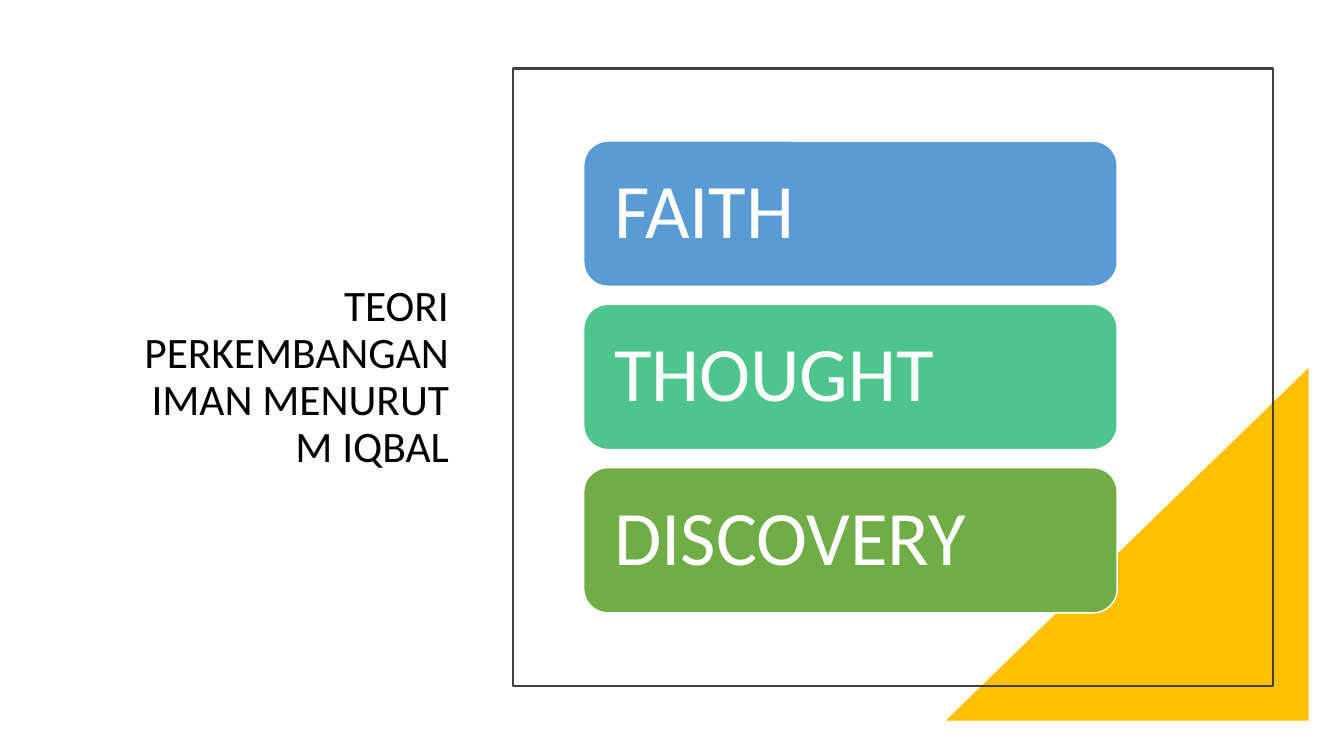
from pptx import Presentation
from pptx.dml.color import RGBColor
from pptx.enum.shapes import MSO_SHAPE as Shape
from pptx.enum.text import MSO_ANCHOR as Anchor, PP_ALIGN as Align
from pptx.util import Inches, Pt

# Content
TITLE = "TEORI PERKEMBANGAN IMAN MENURUT M IQBAL"
STAGES = [("FAITH", "5B9BD5"), ("THOUGHT", "4DC58D"), ("DISCOVERY", "70AD47")]

# Layout in inches
TITLE_BOX = (1.1, 1.3, 3.45, 4.9)
CORNER_BOX = (9.38, 3.65, 3.6, 3.5)
FRAME_BOX = (5.09, 0.68, 7.54, 6.13)
STAGE_LEFT, STAGE_TOP, STAGE_WIDTH, STAGE_HEIGHT = 5.79, 1.4, 5.29, 1.44
STAGE_STEP = 1.62
STAGE_INSET = 0.23


def color(value):
    return RGBColor.from_string(value)


def add_block(slide, kind, box, fill=None, line=None, line_width=1):
    block = slide.shapes.add_shape(kind, *map(Inches, box))
    block.shadow.inherit = False
    if fill:
        block.fill.solid()
        block.fill.fore_color.rgb = color(fill)
    else:
        block.fill.background()
    if line:
        block.line.color.rgb = color(line)
        block.line.width = Pt(line_width)
    else:
        block.line.fill.background()
    return block


def write(block, text, size, ink, align):
    frame = block.text_frame
    frame.text = text
    frame.word_wrap = True
    frame.vertical_anchor = Anchor.MIDDLE
    paragraph = frame.paragraphs[0]
    paragraph.alignment = align
    paragraph.line_spacing = 0.9
    font = paragraph.runs[0].font
    font.name, font.size = "Calibri", Pt(size)
    font.color.rgb = color(ink)
    return frame


def main():
    deck = Presentation()
    deck.slide_width, deck.slide_height = Inches(13.33), Inches(7.5)
    slide = deck.slides.add_slide(deck.slide_layouts[6])

    # Title
    title = slide.shapes.add_textbox(*map(Inches, TITLE_BOX))
    write(title, TITLE, 31, "000000", Align.RIGHT)

    # Corner triangle, mirrored so its right angle sits bottom right
    corner = add_block(slide, Shape.RIGHT_TRIANGLE, CORNER_BOX, fill="FFC000")
    corner.element.spPr.xfrm.set("flipH", "1")

    # Frame around the stages
    add_block(slide, Shape.RECTANGLE, FRAME_BOX, line="404040", line_width=1.5)

    # Stages, evenly stacked
    for row, (name, fill) in enumerate(STAGES):
        box = (STAGE_LEFT, STAGE_TOP + row * STAGE_STEP, STAGE_WIDTH, STAGE_HEIGHT)
        stage = add_block(slide, Shape.ROUNDED_RECTANGLE, box, fill, "FFFFFF")
        frame = write(stage, name, 55, "FFFFFF", Align.LEFT)
        frame.margin_left = frame.margin_right = Inches(STAGE_INSET)
        frame.margin_top = frame.margin_bottom = Inches(STAGE_INSET)

    deck.save("out.pptx")


if __name__ == "__main__":
    main()
